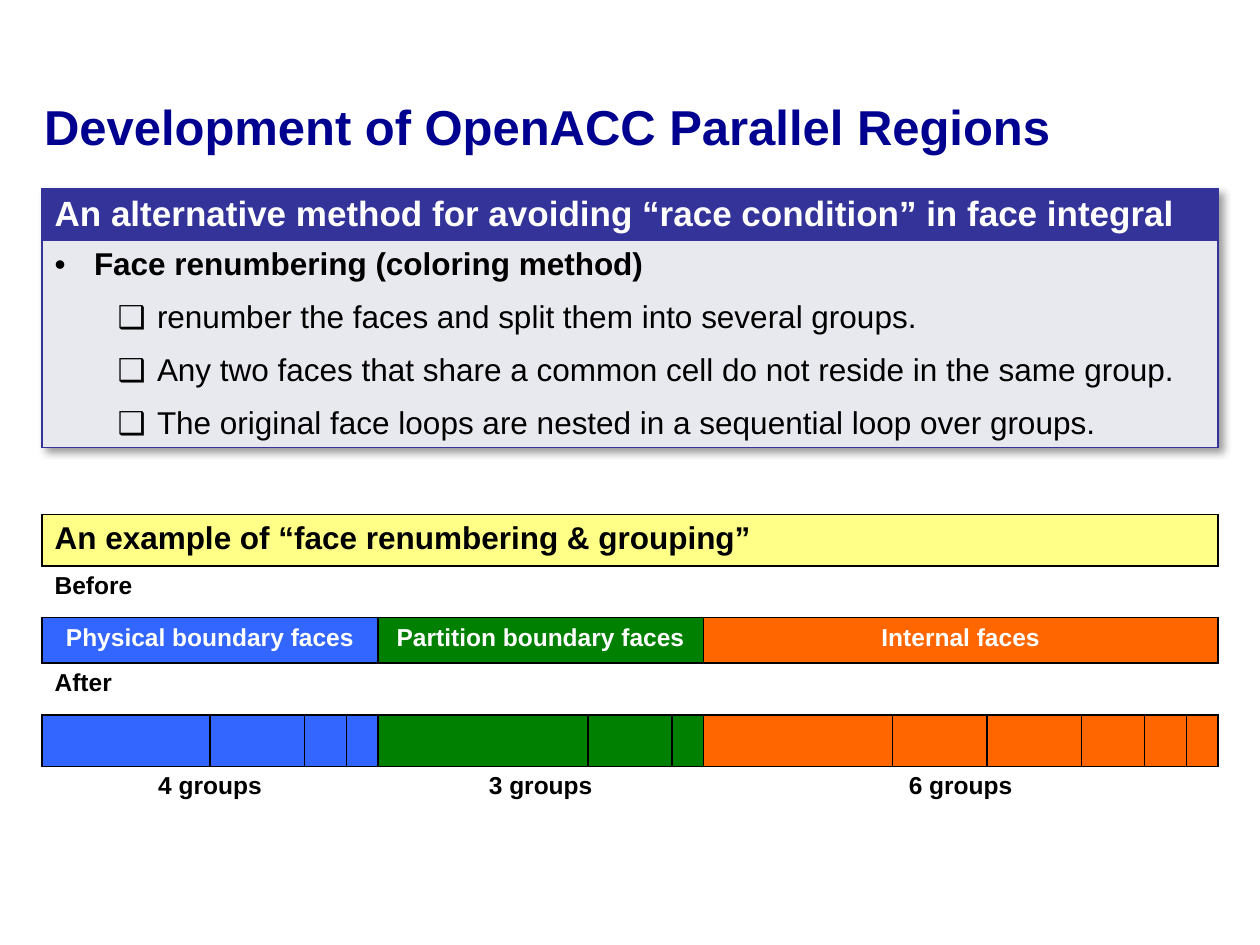
from lxml import etree
from pptx import Presentation
from pptx.dml.color import RGBColor
from pptx.enum.text import MSO_ANCHOR, PP_ALIGN
from pptx.oxml import parse_xml
from pptx.oxml.ns import nsdecls, qn
from pptx.util import Pt

LEFT, CENTER, JUSTIFY = PP_ALIGN.LEFT, PP_ALIGN.CENTER, PP_ALIGN.JUSTIFY
MIDDLE = MSO_ANCHOR.MIDDLE
PLAIN_STYLE = "{2D5ABB26-0587-4C30-8999-92F81FD0307C}"
BLACK, WHITE, NAVY = "000000", "FFFFFF", "333399"

POINTS = [
    "renumber the faces and split them into several groups.",
    "Any two faces that share a common cell do not reside in the same group.",
    "The original face loops are nested in a sequential loop over groups.",
]
# label, colour, group widths in points
FACE_KINDS = [
    ("Physical boundary faces", "3366FF", [96, 54, 24, 18]),
    ("Partition boundary faces", "008000", [120, 48, 18]),
    ("Internal faces", "FF6600", [108, 54, 54, 36, 24, 18]),
]


def rgb(color):
    return RGBColor.from_string(color)


def add_text(p, text, size, color=BLACK, bold=True, align=LEFT):
    p.alignment = align
    r = p.add_run()
    r.text = text
    r.font.name = "Arial"
    r.font.size = Pt(size)
    r.font.bold = bold
    r.font.color.rgb = rgb(color)


def set_bullet(p, char, indent, hang=22.5):
    pPr = p._p.get_or_add_pPr()
    pPr.set("marL", str(Pt(indent)))
    pPr.set("indent", str(-Pt(hang)))
    etree.SubElement(pPr, qn("a:buFont")).set("typeface", "Arial")
    etree.SubElement(pPr, qn("a:buChar")).set("char", char)


def style_cell(cell, fill=None, line=BLACK, edges="LRTB"):
    """Draw the named edges, hide the others, and fill the cell."""
    tcPr = cell._tc.get_or_add_tcPr()
    for side in "LRTB":
        ln = etree.SubElement(tcPr, qn("a:ln" + side), w=str(Pt(1)))
        if side in edges:
            paint = etree.SubElement(ln, qn("a:solidFill"))
            etree.SubElement(paint, qn("a:srgbClr"), val=line)
        else:
            etree.SubElement(ln, qn("a:noFill"))
    if fill:
        cell.fill.solid()
        cell.fill.fore_color.rgb = rgb(fill)
    else:
        cell.fill.background()


def add_plain_table(s, x, y, widths, heights):
    frame = s.shapes.add_table(len(heights), len(widths), Pt(x), Pt(y),
                               Pt(sum(widths)), Pt(sum(heights)))
    table = frame.table
    table.first_row = table.horz_banding = False
    table._tbl.tblPr.find(qn("a:tableStyleId")).text = PLAIN_STYLE
    for column, width in zip(table.columns, widths):
        column.width = Pt(width)
    for row, height in zip(table.rows, heights):
        row.height = Pt(height)
    return table


def add_span(table, row, first, last, text, size, color=BLACK, align=LEFT, **style):
    for col in range(first, last + 1):
        style_cell(table.cell(row, col), **style)
    cell = table.cell(row, first)
    cell.merge(table.cell(row, last))
    add_text(cell.text_frame.paragraphs[0], text, size, color, align=align)


def add_title(s, x, y, w, h):
    sp = s.shapes.title
    sp.left, sp.top, sp.width, sp.height = Pt(x), Pt(y), Pt(w), Pt(h)
    tf = sp.text_frame
    tf.vertical_anchor = MIDDLE
    add_text(tf.paragraphs[0], "Development of OpenACC Parallel Regions", 28, "000090")


def add_method_table(s, x, y, w):
    table = add_plain_table(s, x, y, [w], [29.5, 118])
    table._tbl.tblPr.insert(0, parse_xml(
        f'<a:effectLst {nsdecls("a")}><a:outerShdw blurRad="50800" dist="38100" '
        'dir="2700000" algn="tl" rotWithShape="0"><a:srgbClr val="000000">'
        '<a:alpha val="40000"/></a:srgbClr></a:outerShdw></a:effectLst>'))
    header, body = table.cell(0, 0), table.cell(1, 0)
    style_cell(header, NAVY, NAVY)
    add_text(header.text_frame.paragraphs[0],
             "An alternative method for avoiding “race condition” in face integral",
             20, WHITE)
    style_cell(body, "E8E8EF", NAVY)
    tf = body.text_frame
    p = tf.paragraphs[0]
    set_bullet(p, "•", 22.5)
    add_text(p, "Face renumbering (coloring method)", 18)
    for point in POINTS:
        p = tf.add_paragraph()
        p.level = 1
        set_bullet(p, "❑", 58.5)
        p.line_spacing = 1.5
        add_text(p, point, 18, bold=False)


def add_example_table(s, x, y):
    widths = [width for _, _, groups in FACE_KINDS for width in groups]
    table = add_plain_table(s, x, y, widths, [29.5, 29.5, 26, 29.5, 29.5, 29.5])
    end = len(widths) - 1
    add_span(table, 0, 0, end, "An example of “face renumbering & grouping”", 18,
             align=JUSTIFY, fill="FFFF88")
    add_span(table, 1, 0, end, "Before", 14, align=JUSTIFY, edges="TB")
    add_span(table, 3, 0, end, "After", 14, edges="TB")
    first = 0
    for label, color, groups in FACE_KINDS:
        last = first + len(groups) - 1
        add_span(table, 2, first, last, label, 14, WHITE, CENTER, fill=color)
        for col in range(first, last + 1):
            style_cell(table.cell(4, col), color)
        add_span(table, 5, first, last, f"{len(groups)} groups", 14,
                 align=CENTER, edges="T")
        first = last + 1


def main():
    prs = Presentation()
    prs.slide_width, prs.slide_height = Pt(720), Pt(540)
    s = prs.slides.add_slide(prs.slide_layouts[5])
    add_title(s, 18, 48, 678, 48)
    add_method_table(s, 24, 108, 672)
    add_example_table(s, 24, 294)
    prs.save("out.pptx")


if __name__ == "__main__":
    main()
